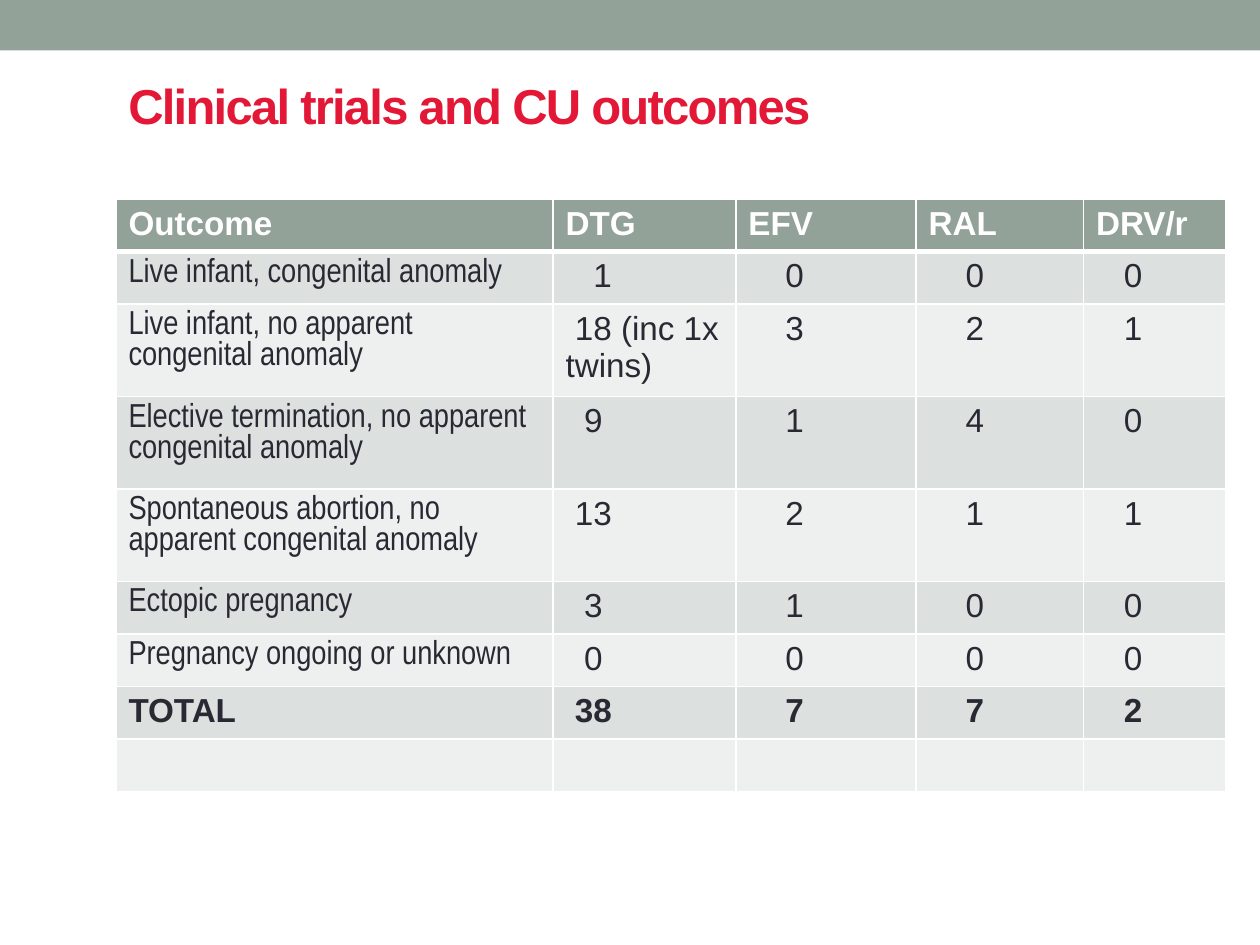
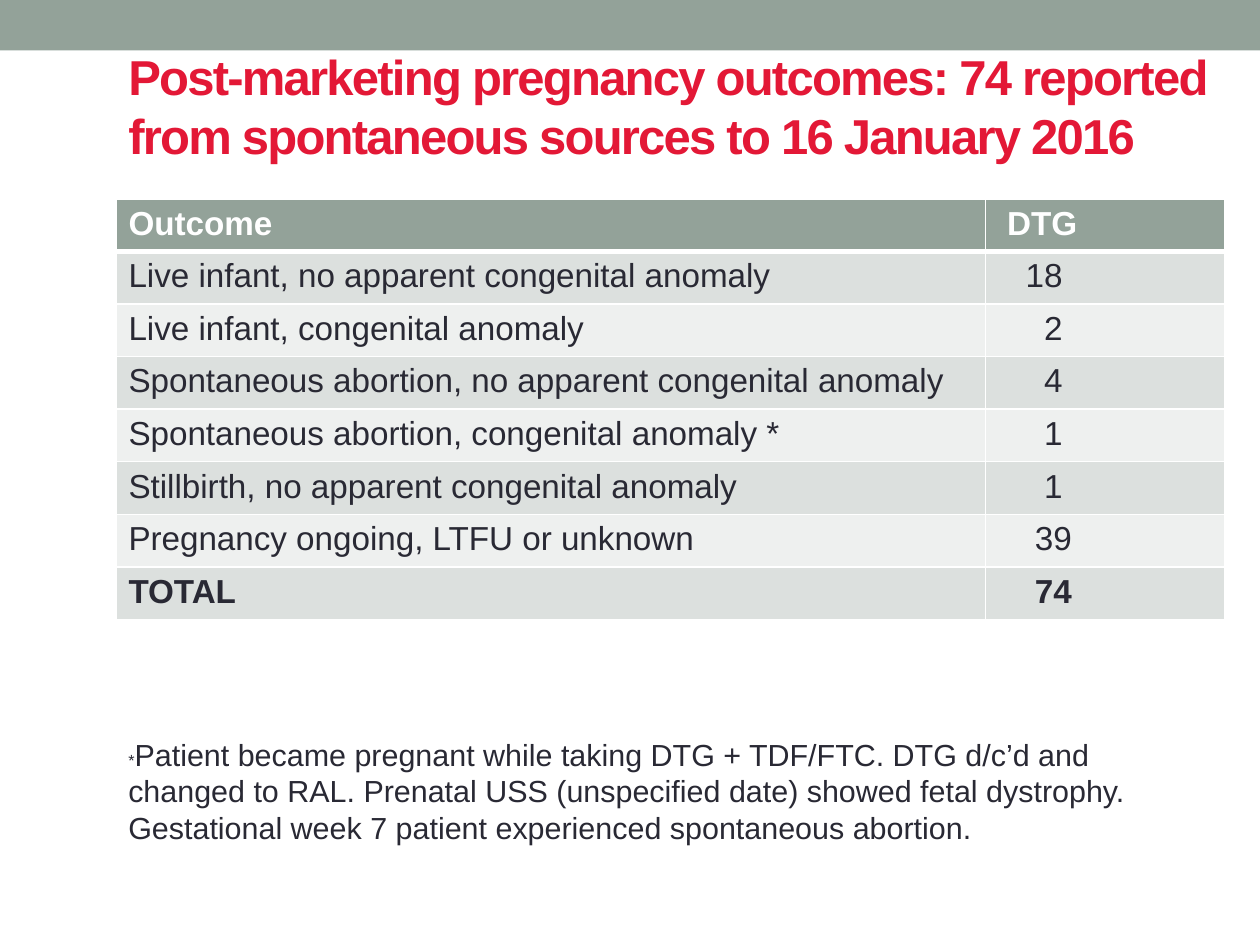
from pptx import Presentation
from pptx.dml.color import RGBColor
from pptx.enum.shapes import MSO_SHAPE as Shape
from pptx.enum.text import MSO_ANCHOR as Anchor, MSO_AUTO_SIZE as AutoSize
from pptx.oxml.ns import qn
from pptx.util import Inches, Pt
from lxml.etree import SubElement

COLORS = {
    "band": "93A299",
    "title": "E31836",
    "ink": "292934",
    "white": "FFFFFF",
    "odd": "DCE0DE",
    "even": "EEF0EF",
}
COLUMNS, ROWS = 100, 75
LEFT, WIDTH = 9.2, 88
BAND_BOX = (0, 0, COLUMNS, 4)
TITLE_BOX = (LEFT, 4.4, WIDTH, 7.9)
TABLE_BOX = (LEFT, 15.8, WIDTH)
FOOTNOTE_BOX = (LEFT, 59.9, WIDTH, 9.4)
SINGLE, DOUBLE = 4.17, 7.34
SPACE = Pt(19 * 0.278)

TITLE = {"name": "Arial", "size": Pt(28), "bold": True}
CELL = {"name": "Arial", "size": Pt(19), "bold": False}
STRONG = {**CELL, "bold": True}
NARROW = {**CELL, "name": "Arial Narrow"}
NOTE = {"name": "Arial", "size": Pt(17.4)}
MARK = {**NOTE, "size": Pt(9.2)}

TRIALS = {
    "title": "Clinical trials and CU outcomes",
    "label": NARROW,
    "widths": (34.7, 14.5, 14.3, 13.3, 11.3),
    "rows": (
        (SINGLE, "Outcome", "DTG", "EFV", "RAL", "DRV/r"),
        (SINGLE, "Live infant, congenital anomaly", "1", "0", "0", "0"),
        (DOUBLE, "Live infant, no apparent congenital anomaly", "18 (inc 1x twins)", "3", "2", "1"),
        (DOUBLE, "Elective termination, no apparent congenital anomaly", "9", "1", "4", "0"),
        (DOUBLE, "Spontaneous abortion, no apparent congenital anomaly", "13", "2", "1", "1"),
        (SINGLE, "Ectopic pregnancy", "3", "1", "0", "0"),
        (SINGLE, "Pregnancy ongoing or unknown", "0", "0", "0", "0"),
        (SINGLE, "TOTAL", "38", "7", "7", "2"),
        (SINGLE, "", "", "", "", ""),
    ),
    "indents": (
        (0,) * 9,
        (0, 3, 1, 2, 1, 2, 2, 1, 0),
        (0,) + (4,) * 8,
        (0,) + (4,) * 8,
        (0,) + (3,) * 8,
    ),
}
MARKETING = {
    "title": "Post-marketing pregnancy outcomes: 74 reported from spontaneous sources to 16 January 2016",
    "label": CELL,
    "widths": (69, 19),
    "rows": (
        (SINGLE, "Outcome", "DTG"),
        (SINGLE, "Live infant, no apparent congenital anomaly", "18"),
        (SINGLE, "Live infant, congenital anomaly", "2"),
        (SINGLE, "Spontaneous abortion, no apparent congenital anomaly", "4"),
        (SINGLE, "Spontaneous abortion, congenital anomaly *", "1"),
        (SINGLE, "Stillbirth, no apparent congenital anomaly", "1"),
        (SINGLE, "Pregnancy ongoing, LTFU or unknown", "39"),
        (SINGLE, "TOTAL", "74"),
    ),
    "indents": ((0,) * 8, (1, 3, 5, 5, 5, 5, 4, 4)),
    "footnote": (
        "Patient became pregnant while taking DTG + TDF/FTC. DTG d/c’d and changed to RAL. "
        "Prenatal USS (unspecified date) showed fetal dystrophy. "
        "Gestational week 7 patient experienced spontaneous abortion."
    ),
}


def grid(units):
    return Inches(units * 10 / COLUMNS)


def color(key):
    return RGBColor.from_string(COLORS[key])


def write(paragraph, text, style, ink):
    run = paragraph.add_run()
    run.text = text
    for attribute, value in style.items():
        setattr(run.font, attribute, value)
    run.font.color.rgb = color(ink)
    return run


def text_area(slide, box, anchor):
    frame = slide.shapes.add_textbox(*map(grid, box)).text_frame
    options = {"word_wrap": True, "auto_size": AutoSize.NONE, "vertical_anchor": anchor}
    for attribute, value in options.items():
        setattr(frame, attribute, value)
    return frame


def add_band(slide, box):
    band = slide.shapes.add_shape(Shape.RECTANGLE, *map(grid, box))
    band.shadow.inherit = False
    band.fill.solid()
    band.fill.fore_color.rgb = color("band")
    band.line.fill.background()


def add_title(slide, box, text):
    heading = text_area(slide, box, Anchor.MIDDLE).paragraphs[0]
    run = write(heading, text, TITLE, "title")
    run.font._element.set("spc", "-100")


def add_footnote(slide, box, text):
    frame = text_area(slide, box, Anchor.BOTTOM)
    frame.margin_bottom = grid(2.2)
    note = frame.paragraphs[0]
    write(note, "*", MARK, "ink")
    write(note, text, NOTE, "ink")


def draw_borders(cell, row):
    properties = cell._tc.get_or_add_tcPr()
    widths = {"lnL": 1, "lnR": 1, "lnT": 3 if row == 1 else 1, "lnB": 3 if row == 0 else 1}
    for edge, width in widths.items():
        line = SubElement(properties, qn(f"a:{edge}"), w=str(Pt(width)))
        fill = SubElement(line, qn("a:solidFill"))
        SubElement(fill, qn("a:srgbClr"), val=COLORS["white"])


def fill_cell(cell, row, text, style, indent):
    draw_borders(cell, row)
    cell.fill.solid()
    shade = "band" if row == 0 else "odd" if row % 2 else "even"
    cell.fill.fore_color.rgb = color(shade)
    if text:
        paragraph = cell.text_frame.paragraphs[0]
        properties = paragraph._p.get_or_add_pPr()
        properties.set("marL", "0")
        properties.set("indent", str(indent * SPACE))
        write(paragraph, text, style, "white" if row == 0 else "ink")


def add_outcomes(slide, box, content):
    rows, widths = content["rows"], content["widths"]
    height = sum(row[0] for row in rows)
    outcomes = slide.shapes.add_table(len(rows), len(widths), *map(grid, (*box, height))).table
    for column, width in zip(outcomes.columns, widths):
        column.width = grid(width)
    for r, (row_height, *texts) in enumerate(rows):
        outcomes.rows[r].height = grid(row_height)
        strong = r == 0 or texts[0] == "TOTAL"
        for c, text in enumerate(texts):
            style = STRONG if strong else content["label"] if c == 0 else CELL
            fill_cell(outcomes.cell(r, c), r, text, style, content["indents"][c][r])


def add_outcome_slide(deck, content):
    slide = deck.slides.add_slide(deck.slide_layouts[6])
    add_band(slide, BAND_BOX)
    add_outcomes(slide, TABLE_BOX, content)
    add_title(slide, TITLE_BOX, content["title"])
    if "footnote" in content:
        add_footnote(slide, FOOTNOTE_BOX, content["footnote"])


def main():
    deck = Presentation()
    deck.slide_width, deck.slide_height = grid(COLUMNS), grid(ROWS)
    for content in (TRIALS, MARKETING):
        add_outcome_slide(deck, content)
    deck.save("out.pptx")


if __name__ == "__main__":
    main()
